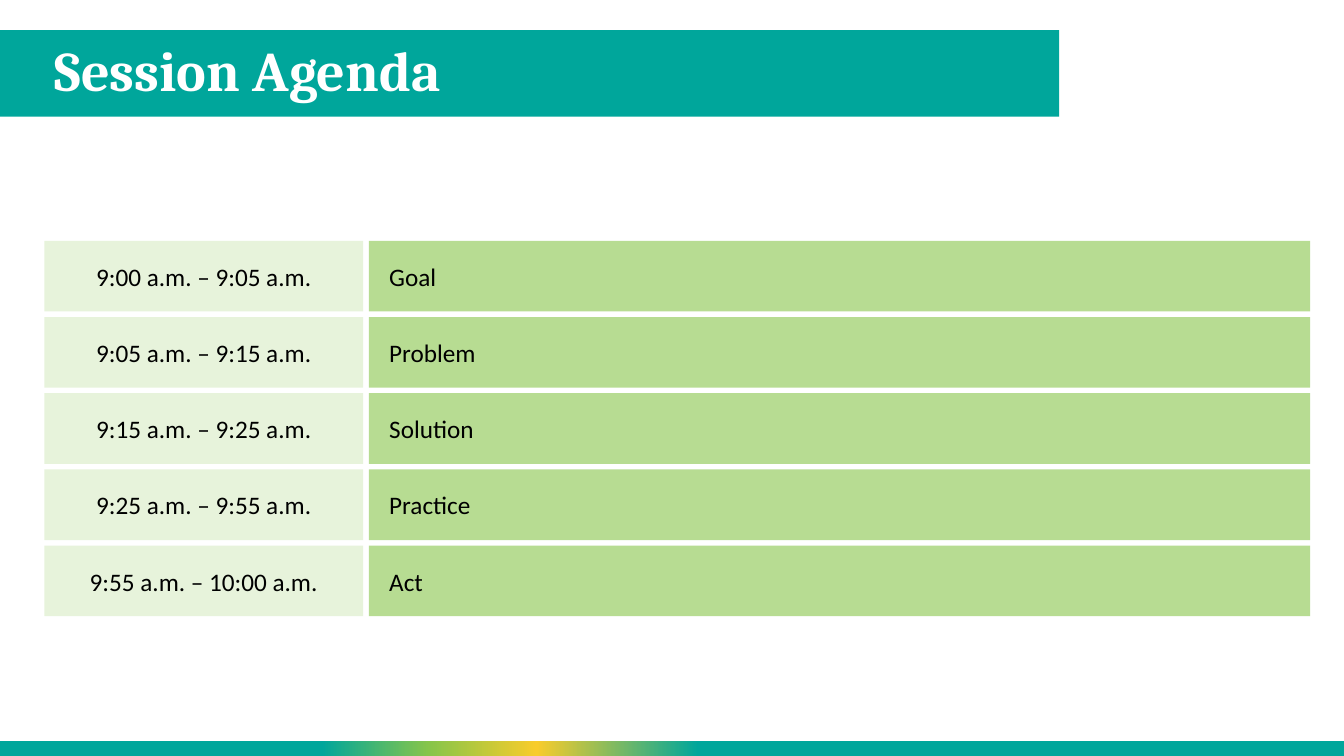
"""Build the session agenda slide."""
from pptx import Presentation
from pptx.dml.color import RGBColor
from pptx.enum.shapes import MSO_SHAPE
from pptx.enum.text import MSO_ANCHOR, PP_ALIGN
from pptx.oxml import parse_xml
from pptx.oxml.ns import nsdecls
from pptx.util import Cm, Pt

TITLE = "Session Agenda"
AGENDA = [
    ("9:00 a.m. – 9:05 a.m.", "Goal"),
    ("9:05 a.m. – 9:15 a.m.", "Problem"),
    ("9:15 a.m. – 9:25 a.m.", "Solution"),
    ("9:25 a.m. – 9:55 a.m.", "Practice"),
    ("9:55 a.m. – 10:00 a.m.", "Act"),
]
TEAL, WHITE, BLACK = "00A69B", "FFFFFF", "000000"
STOPS = [(0, TEAL), (48, TEAL), (60, "F8CC2B"), (68, "87C54A"), (76, TEAL), (100, TEAL)]
TITLE_FONT = {"name": "Cambria", "size": Pt(40), "bold": True}
BODY_FONT = {"name": "Calibri", "size": Pt(18)}
COLUMNS = [
    {"left": 1.12, "width": 8.03, "fill": "E7F3DB", "align": PP_ALIGN.CENTER, "inset": 0.25},
    {"left": 9.3, "width": 23.72, "fill": "B7DC92", "align": PP_ALIGN.LEFT, "inset": 0.51},
]
ROW_TOP, ROW_HEIGHT, ROW_PITCH = 6.07, 1.78, 1.92
HEADER_TOP, HEADER_HEIGHT = 0.76, 2.18


def rgb(value):
    return RGBColor.from_string(value)


def add_rect(s, box, fill):
    sp = s.shapes.add_shape(MSO_SHAPE.RECTANGLE, *map(Cm, box))
    sp.shadow.inherit = False
    sp.line.fill.background()
    sp.fill.solid()
    sp.fill.fore_color.rgb = rgb(fill)
    return sp


def set_text(sp, text, font, color, align=PP_ALIGN.LEFT, inset=0.25):
    tf = sp.text_frame
    frame = {"word_wrap": True, "vertical_anchor": MSO_ANCHOR.MIDDLE,
             "margin_left": Cm(inset), "margin_right": Cm(inset)}
    for key, value in frame.items():
        setattr(tf, key, value)
    p = tf.paragraphs[0]
    p.alignment = align
    r = p.add_run()
    r.text = text
    for key, value in font.items():
        setattr(r.font, key, value)
    r.font.color.rgb = rgb(color)
    return p


def set_gradient(sp, stops):
    marks = "".join(f'<a:gs pos="{pos * 1000}"><a:srgbClr val="{color}"/></a:gs>'
                    for pos, color in stops)
    grad = parse_xml(f'<a:gradFill {nsdecls("a")}><a:gsLst>{marks}</a:gsLst>'
                     '<a:lin ang="10800000" scaled="0"/></a:gradFill>')
    sppr = sp.element.spPr
    sppr.replace(sppr.find("{*}solidFill"), grad)


def main():
    prs = Presentation()
    prs.slide_width, prs.slide_height = Cm(33.87), Cm(19.05)
    s = prs.slides.add_slide(prs.slide_layouts[6])

    add_rect(s, (-0.03, HEADER_TOP, 26.72, HEADER_HEIGHT), TEAL)
    set_gradient(add_rect(s, (-0.03, 18.67, 33.9, 0.38), TEAL), STOPS)
    title = s.shapes.add_textbox(*map(Cm, (1.12, HEADER_TOP, 25.55, HEADER_HEIGHT)))
    set_text(title, TITLE, TITLE_FONT, WHITE).line_spacing = 0.9

    for i, row in enumerate(AGENDA):
        for text, col in zip(row, COLUMNS):
            box = (col["left"], ROW_TOP + i * ROW_PITCH, col["width"], ROW_HEIGHT)
            sp = add_rect(s, box, col["fill"])
            set_text(sp, text, BODY_FONT, BLACK, col["align"], col["inset"])

    prs.save("out.pptx")


if __name__ == "__main__":
    main()
